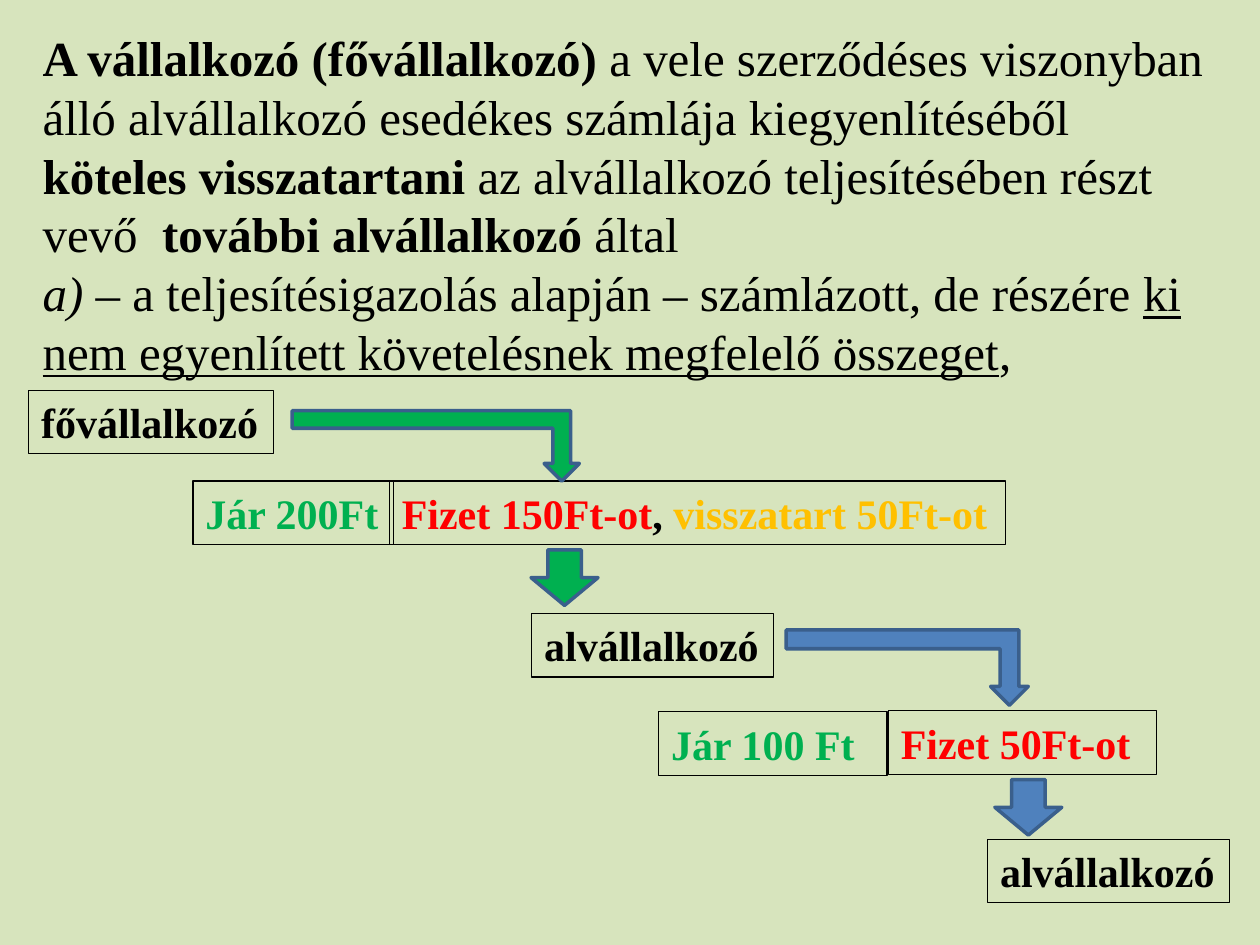
from pptx import Presentation
from pptx.dml.color import RGBColor
from pptx.enum.shapes import MSO_SHAPE as Shape
from pptx.enum.text import MSO_AUTO_SIZE as AutoSize
from pptx.util import Cm, Pt

BACKGROUND = RGBColor(0xD7, 0xE4, 0xBD)
BLACK = RGBColor(0, 0, 0)
GREEN = RGBColor(0x00, 0xB0, 0x50)
RED = RGBColor(0xFF, 0, 0)
AMBER = RGBColor(0xFF, 0xC0, 0)
BLUE = RGBColor(0x4F, 0x81, 0xBD)
ARROW_EDGE = RGBColor(0x3A, 0x5F, 0x8C)
FONT = "Times New Roman"
BOX_HEIGHT = 1.28

# Introduction: paragraphs of (text, format)
BOLD, ITALIC, UNDERLINE = {"bold": True}, {"italic": True}, {"underline": True}
INTRO = [
    [("A vállalkozó (fővállalkozó) ", BOLD),
     ("a vele szerződéses viszonyban álló alvállalkozó esedékes számlája "
      "kiegyenlítéséből ", {}),
     ("köteles visszatartani ", BOLD),
     ("az alvállalkozó teljesítésében részt vevő  ", {}),
     ("további alvállalkozó ", BOLD),
     ("által", {})],
    [("a) ", ITALIC),
     ("– a teljesítésigazolás alapján – számlázott, de részére ", {}),
     ("ki nem egyenlített követelésnek megfelelő összeget", UNDERLINE),
     (",", {})],
]

# Boxes in cm: left, top, width, wrap, [(text, colour)]
BOXES = [
    (0.58, 7.87, 4.93, False, [("fővállalkozó", BLACK)]),
    (3.89, 9.7, 4.04, False, [("Jár 200Ft", GREEN)]),
    (7.85, 9.7, 12.42, False, [("Fizet 150Ft-ot", RED), (", ", BLACK),
                               ("visszatart 50Ft-ot", AMBER)]),
    (10.72, 12.37, 4.88, False, [("alvállalkozó", BLACK)]),
    (13.28, 14.35, 4.6, True, [("Jár 100 Ft", GREEN)]),
    (17.91, 14.33, 5.41, True, [("Fizet 50Ft-ot", RED)]),
    (19.91, 16.92, 4.88, False, [("alvállalkozó", BLACK)]),
]

# Arrows in cm: preset, left, top, width, height, colour
ARROWS = [
    (Shape.BENT_UP_ARROW, 5.89, 8.28, 5.79, 1.42, GREEN),
    (Shape.RIGHT_ARROW, 10.82, 10.97, 1.12, 1.35, GREEN),
    (Shape.BENT_UP_ARROW, 15.85, 12.7, 4.88, 1.52, BLUE),
    (Shape.RIGHT_ARROW, 20.17, 15.6, 1.12, 1.35, BLUE),
]


def add_span(para, text, size, color, **formats):
    span = para.add_run()
    span.text = text
    span.font.color.rgb = color
    for name, value in {"name": FONT, "size": Pt(size), **formats}.items():
        setattr(span.font, name, value)


def add_text_box(page, left, top, width, height, wrap=True):
    box = page.shapes.add_textbox(Cm(left), Cm(top), Cm(width), Cm(height))
    box.text_frame.word_wrap = wrap
    box.text_frame.auto_size = AutoSize.SHAPE_TO_FIT_TEXT
    return box


def add_arrow(page, preset, left, top, width, height, color):
    arrow = page.shapes.add_shape(preset, Cm(left), Cm(top), Cm(width), Cm(height))
    arrow.shadow.inherit = False
    arrow.fill.solid()
    arrow.fill.fore_color.rgb = color
    arrow.line.color.rgb = ARROW_EDGE
    arrow.line.width = Pt(2)
    # Every arrow points down
    if preset == Shape.BENT_UP_ARROW:
        arrow.element.spPr.xfrm.set("flipV", "1")
    else:
        arrow.rotation = 90


def main():
    deck = Presentation()
    deck.slide_width, deck.slide_height = Cm(25.4), Cm(19.05)
    page = deck.slides.add_slide(deck.slide_layouts[6])
    page.background.fill.solid()
    page.background.fill.fore_color.rgb = BACKGROUND

    # Introduction
    frame = add_text_box(page, 0.61, 0.43, 24.2, 7.44).text_frame
    for number, spans in enumerate(INTRO):
        para = frame.add_paragraph() if number else frame.paragraphs[0]
        for text, formats in spans:
            add_span(para, text, 28, BLACK, **formats)

    # Parties and amounts
    for left, top, width, wrap, spans in BOXES:
        box = add_text_box(page, left, top, width, BOX_HEIGHT, wrap)
        box.line.color.rgb = BLACK
        box.line.width = Pt(0.75)
        for text, color in spans:
            add_span(box.text_frame.paragraphs[0], text, 24, color, bold=True)

    # Payment flow
    for arrow in ARROWS:
        add_arrow(page, *arrow)

    deck.save("out.pptx")


if __name__ == "__main__":
    main()
